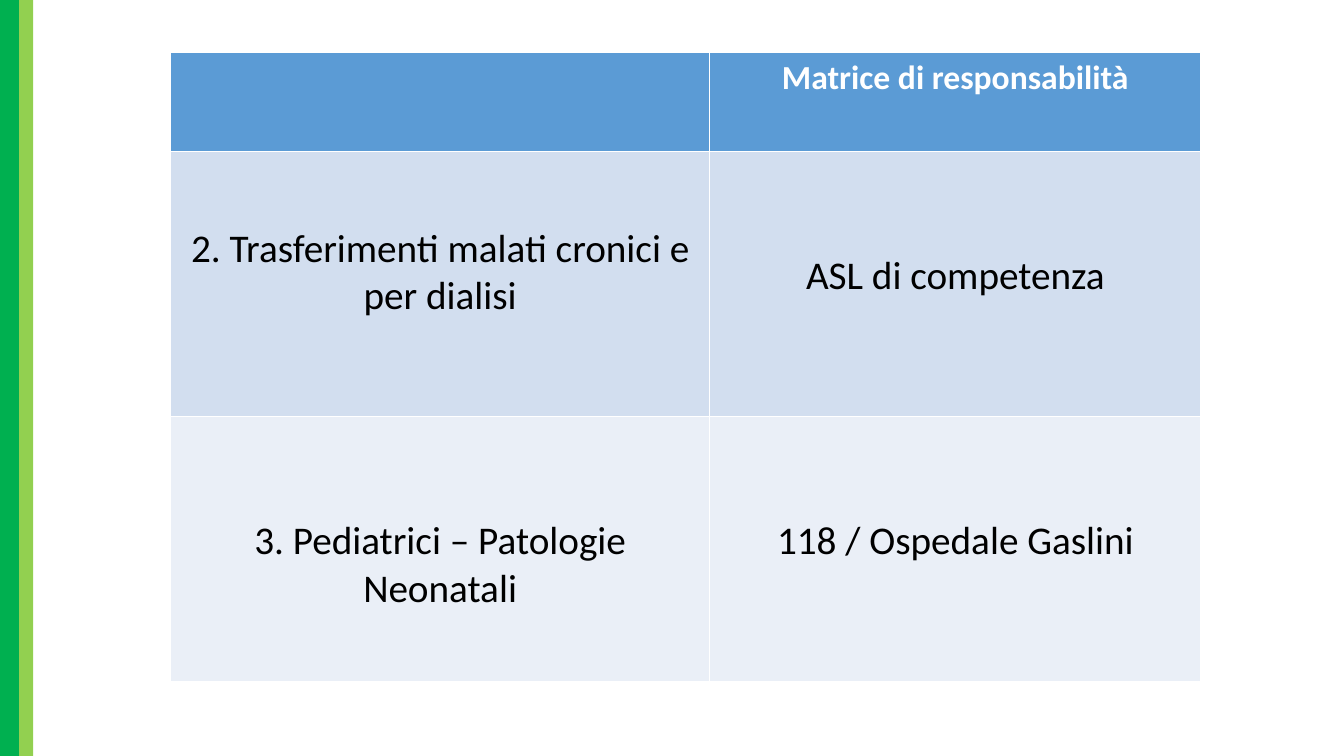
"""Build a slide with a responsibility matrix beside two green side bands."""
from pptx import Presentation
from pptx import util as u
from pptx.dml import color
from pptx.enum import shapes, text

COLORS = {"green": "00B050", "lime": "92D050", "header": "5B9BD5",
          "band": "D2DEEF", "light": "EAEFF7", "white": "FFFFFF", "black": "000000"}


def rgb(name):
    return color.RGBColor.from_string(COLORS[name])


def write(tf, content, size=28, ink="black", bold=False):
    p = tf.paragraphs[0]
    p.alignment = text.PP_ALIGN.CENTER
    r = p.add_run()
    r.text = content
    r.font.name = "Calibri"
    r.font.size = u.Pt(size)
    r.font.bold = bold
    r.font.color.rgb = rgb(ink)


class Deck:
    def __init__(self, width, height):
        self.prs = Presentation()
        self.prs.slide_width = u.Inches(width)
        self.prs.slide_height = u.Inches(height)
        self.s = self.prs.slides.add_slide(self.prs.slide_layouts[6])

    def x(self, inches):
        return u.Inches(inches)

    def band(self, left, width, fill):
        sp = self.s.shapes.add_shape(shapes.MSO_SHAPE.RECTANGLE, u.Inches(left), 0,
                                     u.Inches(width), self.prs.slide_height)
        sp.shadow.inherit = False
        sp.fill.solid()
        sp.fill.fore_color.rgb = rgb(fill)
        sp.line.fill.background()

    def table(self, left, top, widths, heights, rows):
        frame = self.s.shapes.add_table(len(heights), len(widths), u.Inches(left), u.Inches(top),
                                        u.Inches(sum(widths)), u.Inches(sum(heights)))
        table = frame.table
        for column, width in zip(table.columns, widths):
            column.width = u.Inches(width)
        for i, (height, (fill, style, cells)) in enumerate(zip(heights, rows)):
            table.rows[i].height = u.Inches(height)
            for j, (content, margin) in enumerate(cells):
                cell = table.cell(i, j)
                cell.fill.solid()
                cell.fill.fore_color.rgb = rgb(fill)
                cell.margin_top = u.Inches(margin)
                if content:
                    write(cell.text_frame, content, **style)


def main():
    deck = Deck(13.33, 7.5)
    deck.band(0, 0.19, "green")
    deck.band(0.19, 0.14, "lime")
    deck.table(1.69, 0.52, [5.35, 4.87], [0.98, 2.63, 2.63], [
        ("header", {"size": 24, "ink": "white", "bold": True},
         [("", 0.05), ("Matrice di responsabilità", 0.05)]),
        ("band", {}, [("2. Trasferimenti malati cronici e per dialisi", 0.73),
                      ("ASL di competenza", 1)]),
        ("light", {}, [("3. Pediatrici – Patologie Neonatali", 1),
                       ("118 / Ospedale Gaslini", 1)]),
    ])
    deck.prs.save("out.pptx")


if __name__ == "__main__":
    main()
